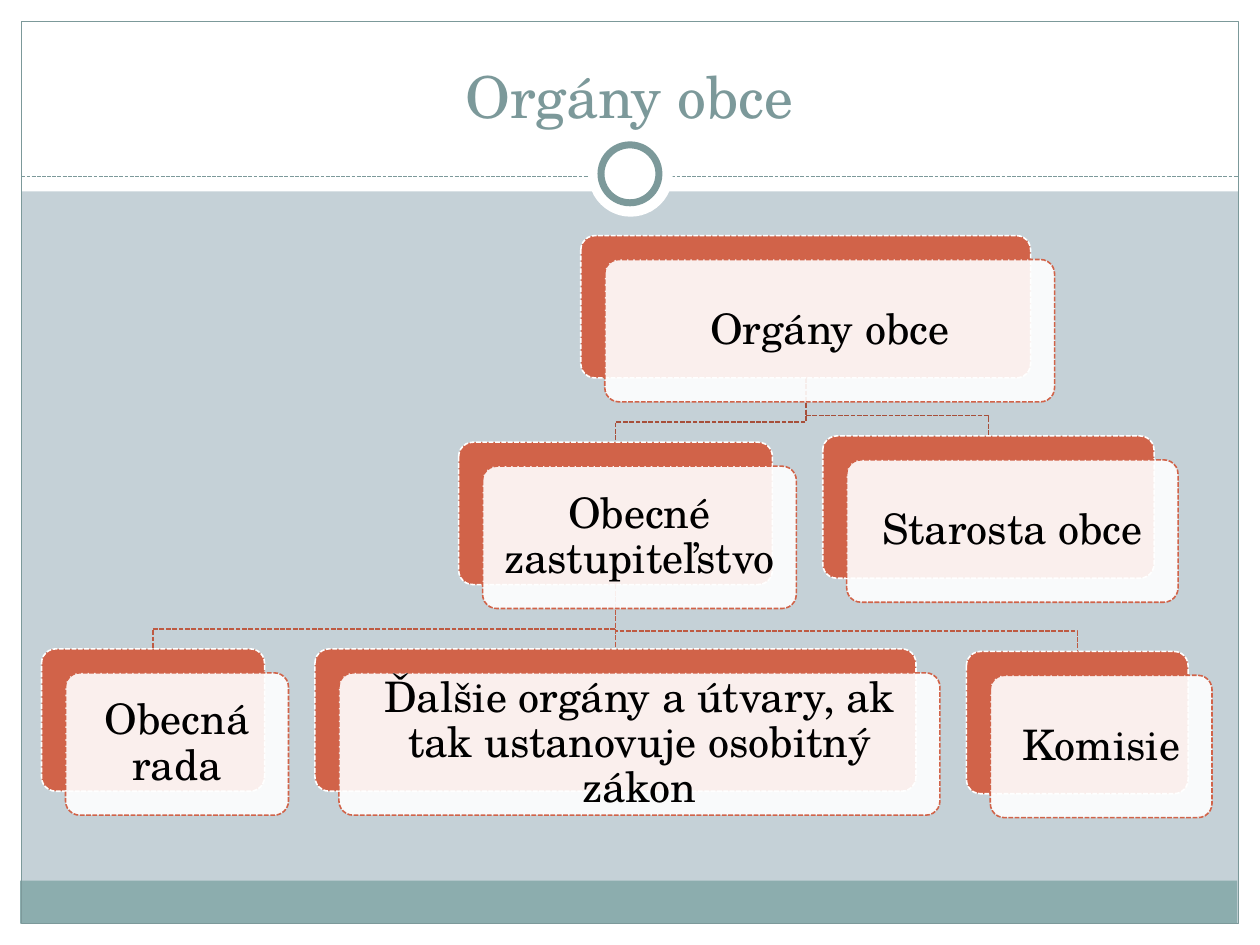
from lxml import etree
from pptx import Presentation
from pptx.dml.color import RGBColor
from pptx.enum.dml import MSO_LINE
from pptx.enum.shapes import MSO_CONNECTOR, MSO_SHAPE
from pptx.enum.text import MSO_ANCHOR, PP_ALIGN
from pptx.oxml.ns import qn
from pptx.util import Inches, Pt

RECT, ROUND, OVAL = MSO_SHAPE.RECTANGLE, MSO_SHAPE.ROUNDED_RECTANGLE, MSO_SHAPE.OVAL
DASH = MSO_LINE.SQUARE_DOT
MIDDLE, BOTTOM = MSO_ANCHOR.MIDDLE, MSO_ANCHOR.BOTTOM
CENTER = PP_ALIGN.CENTER
FONT = "TeX Gyre Schola"
COLORS = {
    "back": "C5D1D7", "white": "FFFFFF", "black": "000000", "teal": "8CADAE",
    "gray": "7C999A", "red": "D16349", "upper": "A74F3A", "lower": "BE5A42",
}
RGB = {name: RGBColor.from_string(code) for name, code in COLORS.items()}


def style(shape, fill=None, line=None, width=0.9, dash=None):
    shape.shadow.inherit = False
    if fill:
        shape.fill.solid()
        shape.fill.fore_color.rgb = RGB[fill]
    else:
        shape.fill.background()
    if line:
        shape.line.color.rgb = RGB[line]
        shape.line.width = Pt(width)
        shape.line.dash_style = dash
    else:
        shape.line.fill.background()


def write(shape, text, size=24, color="black", anchor=MIDDLE, inset=0.1, space=0.9):
    frame = shape.text_frame
    frame.word_wrap = True
    frame.vertical_anchor = anchor
    frame.margin_left = frame.margin_right = Inches(inset)
    frame.margin_top = frame.margin_bottom = Inches(inset)
    para = frame.paragraphs[0]
    para.alignment = CENTER
    para.line_spacing = space
    run = para.add_run()
    run.text = text
    run.font.name = FONT
    run.font.size = Pt(size)
    run.font.color.rgb = RGB[color]


deck = Presentation()
deck.slide_width, deck.slide_height = Inches(10), Inches(7.5)
slide = deck.slides.add_slide(deck.slide_layouts[5])
slide.background.fill.solid()
slide.background.fill.fore_color.rgb = RGB["back"]
shapes = slide.shapes

bands = [
    (0, 7.33, 10, 0.17, "white", None),
    (0, 0, 10, 1.52, "white", None),
    (0, 0, 0.17, 7.5, "white", None),
    (9.83, 0, 0.17, 7.5, "white", None),
    (0.16, 6.99, 9.66, 0.34, "teal", None),
    (0.17, 0.17, 9.66, 7.16, None, "gray"),
]
for *box, fill, line in bands:
    style(shapes.add_shape(RECT, *map(Inches, box)), fill, line, width=0.75)

rule = shapes.add_connector(MSO_CONNECTOR.STRAIGHT, *map(Inches, (0.17, 1.4, 9.83, 1.4)))
rule.line.color.rgb = RGB["gray"]
rule.line.width = Pt(0.75)
rule.line.dash_style = DASH
etree.SubElement(rule.element.spPr, qn("a:effectLst"))

for left, top, side, line in [(4.67, 1.05, 0.67, None), (4.77, 1.15, 0.46, "gray")]:
    ring = shapes.add_shape(OVAL, *map(Inches, (left, top, side, side)))
    style(ring, "white", line, width=4)

title = shapes.title
title.left, title.top = Inches(0.33), Inches(0.25)
title.width, title.height = Inches(9.33), Inches(0.83)
write(title, "Orgány obce", size=33, color="gray", anchor=BOTTOM, inset=0.05, space=1)
title.element.getparent().append(title.element)

HIGH, SHIFT, PAD, BEND = 1.13, 0.19, 0.03, 0.16
cards = {
    "root": (4.61, 1.87, 3.57, "Orgány obce"),
    "board": (3.64, 3.51, 2.49, "Obecné zastupiteľstvo"),
    "council": (0.33, 5.15, 1.77, "Obecná rada"),
    "other": (2.5, 5.15, 4.77, "Ďalšie orgány a útvary, ak tak ustanovuje osobitný zákon"),
    "panels": (7.67, 5.17, 1.76, "Komisie"),
    "mayor": (6.53, 3.46, 2.63, "Starosta obce"),
}
links = [
    ("root", "mayor", "upper"),
    ("board", "panels", "lower"),
    ("board", "other", "lower"),
    ("board", "council", "lower"),
    ("root", "board", "upper"),
]
for parent, child, color in links:
    left, top, wide, _ = cards[parent]
    start, base = left + wide / 2, top + HIGH
    left, top, wide, _ = cards[child]
    end, turn = left + wide / 2, top - BEND
    points = [(start, turn), (end, turn), (end, top)]
    path = shapes.build_freeform(Inches(start), Inches(base))
    path.add_line_segments([(Inches(x), Inches(y)) for x, y in points], close=False)
    style(path.convert_to_shape(), line=color, dash=DASH)

for left, top, wide, text in cards.values():
    for step, fill, line in [(0, "red", "white"), (SHIFT, "white", "red")]:
        box = (left + step, top + step, wide, HIGH)
        card = shapes.add_shape(ROUND, *map(Inches, box))
        card.adjustments[0] = 0.1
        style(card, fill, line, dash=DASH)
    tint = card.element.spPr.find(qn("a:solidFill"))[0]
    etree.SubElement(tint, qn("a:alpha"), val="90000")
    inner = left + SHIFT + PAD, top + SHIFT + PAD, wide - 2 * PAD, HIGH - 2 * PAD
    write(shapes.add_textbox(*map(Inches, inner)), text)

deck.save("out.pptx")
